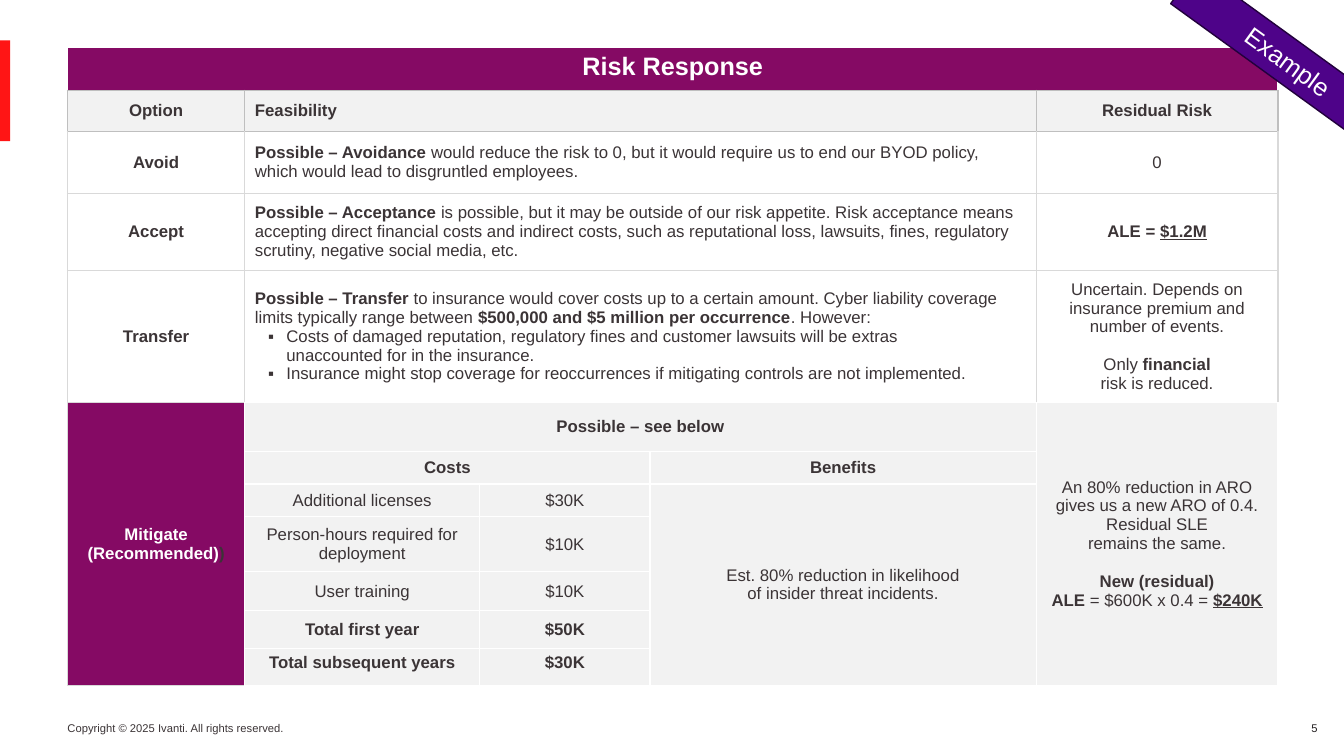
"""Build the risk response slide: one decision table, a footer and a corner ribbon."""
from dataclasses import dataclass
from typing import NamedTuple, Optional

from lxml import etree
from pptx import Presentation
from pptx.dml.color import RGBColor
from pptx.enum.shapes import MSO_SHAPE
from pptx.enum.text import MSO_ANCHOR, PP_ALIGN
from pptx.oxml.ns import qn
from pptx.util import Pt

CENTER, LEFT, RIGHT = PP_ALIGN.CENTER, PP_ALIGN.LEFT, PP_ALIGN.RIGHT
TOP, MIDDLE = MSO_ANCHOR.TOP, MSO_ANCHOR.MIDDLE
RECTANGLE = MSO_SHAPE.RECTANGLE

WHITE = RGBColor(0xFF, 0xFF, 0xFF)
INK = RGBColor(0x3B, 0x34, 0x36)
PAGE_INK = RGBColor(0x23, 0x1F, 0x20)
MAROON = RGBColor(0x85, 0x0A, 0x64)
PALE = RGBColor(0xF2, 0xF2, 0xF2)
SILVER = RGBColor(0xBF, 0xBF, 0xBF)
LIGHT = RGBColor(0xD9, 0xD9, 0xD9)
RED = RGBColor(0xFF, 0x15, 0x15)
PURPLE = RGBColor(0x4E, 0x03, 0x89)
DEEP_PURPLE = RGBColor(0x22, 0x01, 0x3C)

FONT = "Arial"
COLUMN_WIDTHS = (126.7, 167.8, 121.7, 275.8, 172.8)
ROW_HEIGHTS = (30.5, 29.5, 44, 55.4, 94, 35.4, 23, 23.2, 39.6, 27.6, 27, 26.4)


class Run(NamedTuple):
    text: str
    bold: bool = False
    underline: bool = False
    color: Optional[RGBColor] = None


class Para(NamedTuple):
    runs: tuple[Run, ...]
    bullet: bool = False
    space_before: float = 0


class Borders(NamedTuple):
    left: RGBColor
    right: RGBColor
    top: RGBColor
    bottom: RGBColor


WHITE_GRID = Borders(WHITE, WHITE, WHITE, WHITE)
HEADER_GRID = Borders(SILVER, SILVER, SILVER, SILVER)
OPTION_GRID = Borders(LIGHT, LIGHT, LIGHT, LIGHT)
AVOID_GRID = OPTION_GRID._replace(top=SILVER)
TRANSFER_GRID = OPTION_GRID._replace(bottom=WHITE)


@dataclass(frozen=True)
class TableCell:
    row: int
    column: int
    paragraphs: tuple[Para, ...]
    rows: int = 1
    columns: int = 1
    fill: RGBColor = PALE
    borders: Borders = WHITE_GRID
    align: PP_ALIGN = CENTER
    anchor: MSO_ANCHOR = MIDDLE
    size: float = 12
    color: RGBColor = INK


def plain(text: str, bold: bool = False) -> tuple[Para, ...]:
    return (Para((Run(text, bold),)),)


def option_row(row: int, option: str, feasibility: tuple[Para, ...],
               residual: tuple[Para, ...], borders: Borders,
               fill: RGBColor = WHITE) -> list[TableCell]:
    look = {"borders": borders, "fill": fill}
    return [
        TableCell(row, 0, plain(option, True), **look),
        TableCell(row, 1, feasibility, columns=3, align=LEFT, **look),
        TableCell(row, 4, residual, **look),
    ]


def cost_row(row: int, item: str, cost: str, bold: bool = False,
             anchor: MSO_ANCHOR = MIDDLE) -> list[TableCell]:
    return [TableCell(row, column, plain(text, bold), anchor=anchor)
            for column, text in enumerate((item, cost), start=1)]


CELLS = [
    TableCell(0, 0, plain("Risk Response", True), columns=5, fill=MAROON, anchor=TOP,
              size=18, color=WHITE, borders=WHITE_GRID._replace(bottom=SILVER)),
    *option_row(1, "Option", plain("Feasibility", True), plain("Residual Risk", True),
                HEADER_GRID, PALE),
    *option_row(2, "Avoid", (Para((
        Run("Possible – Avoidance ", True),
        Run("would reduce the risk to 0, but it would require us to end our BYOD policy, "
            "which would lead to disgruntled employees."))),), plain("0"), AVOID_GRID),
    *option_row(3, "Accept", (Para((
        Run("Possible – Acceptance", True),
        Run(" is possible, but it may be outside of our risk appetite. Risk acceptance means "
            "accepting direct financial costs and indirect costs, such as reputational loss, "
            "lawsuits, fines, regulatory scrutiny, negative social media, etc."))),),
        (Para((Run("ALE = ", True), Run("$1.2M", True, True))),), OPTION_GRID),
    *option_row(4, "Transfer", (
        Para((Run("Possible – Transfer", True),
              Run(" to insurance would cover costs up to a certain amount. Cyber liability "
                  "coverage limits typically range between "),
              Run("$500,000 and $5 million per occurrence", True), Run(". However:"))),
        Para((Run("Costs of damaged reputation, regulatory fines and customer lawsuits will "
                  "be extras\nunaccounted for in the insurance."),), bullet=True),
        Para((Run("Insurance might stop coverage for reoccurrences if mitigating controls "
                  "are not implemented."),), bullet=True)),
        (Para((Run("Uncertain. Depends on insurance premium and number of events."),)),
         Para((Run("Only "), Run("financial", True)), space_before=13.5),
         Para((Run("risk is reduced."),))), TRANSFER_GRID),
    TableCell(5, 0, (Para((Run("Mitigate (Recommended)", True),
                           Run(")", True, color=INK))),),
              rows=7, fill=MAROON, color=WHITE, borders=OPTION_GRID._replace(right=WHITE)),
    TableCell(5, 1, plain("Possible – see below", True), columns=3),
    TableCell(5, 4, (
        Para((Run("An 80% reduction in ARO gives us a new ARO of 0.4."),)),
        Para((Run("Residual SLE\nremains the same."),)),
        Para((Run("New (residual)\nALE", True), Run(" = $600K x 0.4 = "),
              Run("$240K", True, True)), space_before=13.5)), rows=7),
    TableCell(6, 1, plain("Costs", True), columns=2),
    TableCell(6, 3, plain("Benefits", True)),
    TableCell(7, 3, plain("Est. 80% reduction in likelihood\nof insider threat incidents."),
              rows=5),
    *cost_row(7, "Additional licenses", "$30K"),
    *cost_row(8, "Person-hours required for deployment", "$10K"),
    *cost_row(9, "User training", "$10K"),
    *cost_row(10, "Total first year", "$50K", True),
    *cost_row(11, "Total subsequent years", "$30K", True, TOP),
]


def write_text(frame, paragraphs: tuple[Para, ...], *, size: float, color: RGBColor,
               align: PP_ALIGN = LEFT) -> None:
    for index, content in enumerate(paragraphs):
        paragraph = frame.paragraphs[0] if index == 0 else frame.add_paragraph()
        paragraph.alignment = align
        if content.space_before:
            paragraph.space_before = Pt(content.space_before)
        if content.bullet:
            properties = paragraph._p.get_or_add_pPr()
            properties.set("marL", str(Pt(22.5)))
            properties.set("indent", str(Pt(-13)))
            etree.SubElement(properties, qn("a:buFont"), typeface=FONT)
            etree.SubElement(properties, qn("a:buChar"), char="▪")
        for part in content.runs:
            for line_number, line in enumerate(part.text.split("\n")):
                if line_number:
                    paragraph.add_line_break()
                run = paragraph.add_run()
                run.text = line
                font = run.font
                font.name, font.size = FONT, Pt(size)
                font.bold, font.underline = part.bold, part.underline
                font.color.rgb = part.color or color


def set_borders(cell, borders: Borders) -> None:
    properties = cell._tc.get_or_add_tcPr()
    for side, color in zip("LRTB", borders):
        line = etree.SubElement(properties, qn(f"a:ln{side}"), w=str(Pt(1)))
        fill = etree.SubElement(line, qn("a:solidFill"))
        etree.SubElement(fill, qn("a:srgbClr"), val=str(color))


def add_risk_table(slide) -> None:
    table = slide.shapes.add_table(
        len(ROW_HEIGHTS), len(COLUMN_WIDTHS), Pt(48.2), Pt(34),
        Pt(sum(COLUMN_WIDTHS)), Pt(sum(ROW_HEIGHTS))).table
    table.first_row = table.horz_banding = False
    for column, width in zip(table.columns, COLUMN_WIDTHS):
        column.width = Pt(width)
    for row, height in zip(table.rows, ROW_HEIGHTS):
        row.height = Pt(height)
    for entry in CELLS:
        last_row, last_column = entry.row + entry.rows, entry.column + entry.columns
        for row in range(entry.row, last_row):
            for column in range(entry.column, last_column):
                covered = table.cell(row, column)
                set_borders(covered, entry.borders)
                covered.fill.solid()
                covered.fill.fore_color.rgb = entry.fill
        cell = table.cell(entry.row, entry.column)
        if entry.rows * entry.columns > 1:
            cell.merge(table.cell(last_row - 1, last_column - 1))
        cell.vertical_anchor = entry.anchor
        write_text(cell.text_frame, entry.paragraphs, size=entry.size, color=entry.color,
                   align=entry.align)


def add_bar(slide, left: float, top: float, width: float, height: float, fill: RGBColor):
    bar = slide.shapes.add_shape(RECTANGLE, Pt(left), Pt(top), Pt(width), Pt(height))
    bar.shadow.inherit = False
    bar.fill.solid()
    bar.fill.fore_color.rgb = fill
    bar.line.fill.background()
    return bar


def add_footer(slide, text: str, left: float, width: float, color: RGBColor,
               align: PP_ALIGN, wrap: bool) -> None:
    frame = slide.shapes.add_textbox(Pt(left), Pt(512), Pt(width), Pt(17)).text_frame
    frame.word_wrap = wrap
    frame.margin_left = 0
    write_text(frame, plain(text), size=8, color=color, align=align)


def main() -> None:
    deck = Presentation()
    deck.slide_width, deck.slide_height = Pt(960), Pt(540)
    slide = deck.slides.add_slide(deck.slide_layouts[6])
    add_footer(slide, "Copyright © 2025 Ivanti. All rights reserved.", 48.2, 164, INK,
               LEFT, False)
    add_bar(slide, 0, 28.8, 7.2, 72, RED)
    add_footer(slide, "5", 913.7, 34.6, PAGE_INK, RIGHT, True)
    add_risk_table(slide)
    ribbon = add_bar(slide, 828, 28, 184.3, 31.7, PURPLE)
    ribbon.rotation = 35.9
    ribbon.line.color.rgb = DEEP_PURPLE
    ribbon.line.width = Pt(1)
    ribbon.text_frame.vertical_anchor = MIDDLE
    write_text(ribbon.text_frame, plain("Example"), size=18, color=WHITE, align=CENTER)
    deck.save("out.pptx")


if __name__ == "__main__":
    main()
